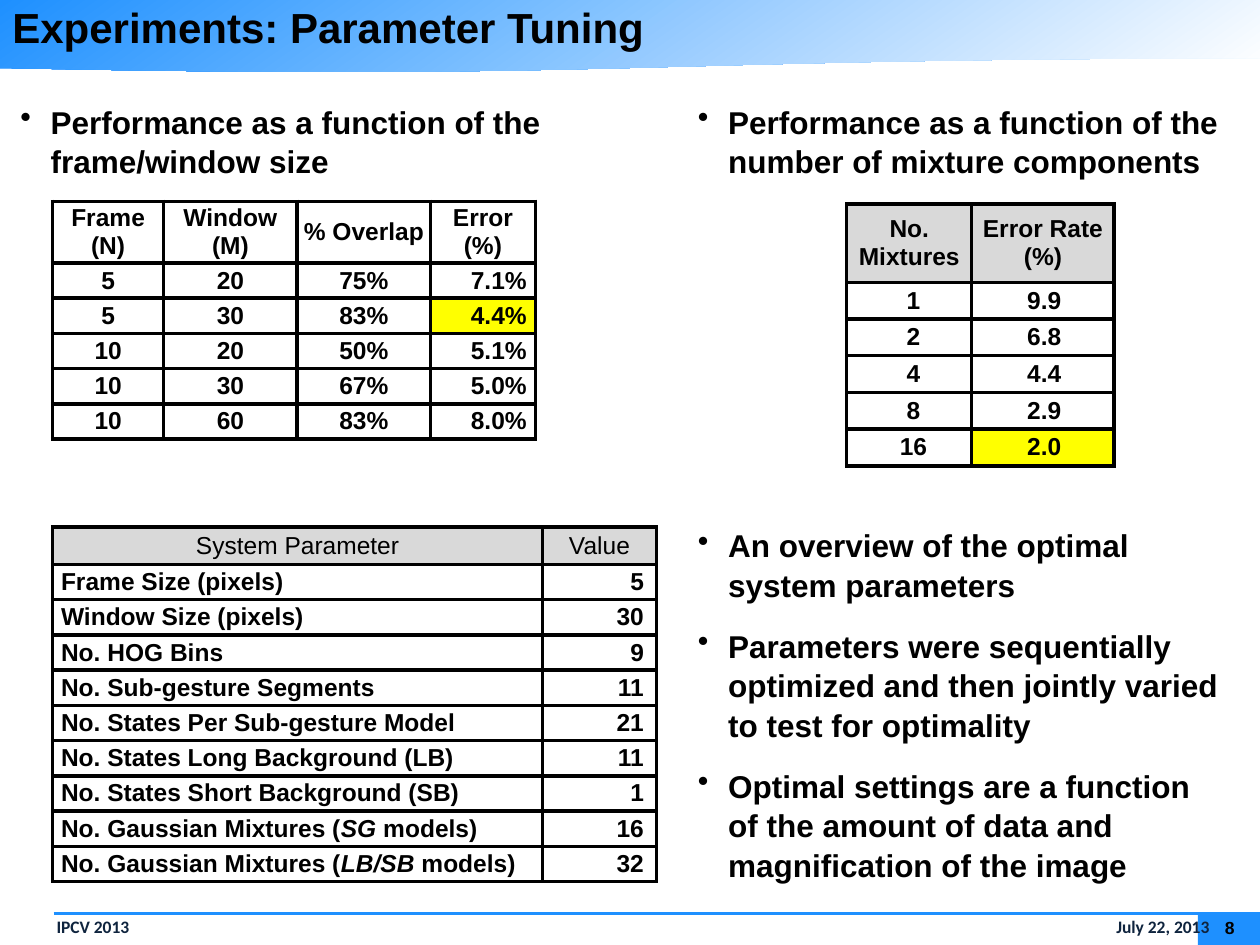
"""Build the slide on tuning the parameters of a gesture system."""
from dataclasses import dataclass

from lxml import etree
from pptx import Presentation
from pptx.dml.color import RGBColor
from pptx.enum.shapes import MSO_CONNECTOR, MSO_SHAPE
from pptx.enum.text import MSO_ANCHOR, PP_ALIGN
from pptx.oxml.ns import qn
from pptx.util import Cm, Pt

LEFT, MID, RIGHT, JUST = PP_ALIGN.LEFT, PP_ALIGN.CENTER, PP_ALIGN.RIGHT, PP_ALIGN.JUSTIFY
TOP, CENTER = MSO_ANCHOR.TOP, MSO_ANCHOR.MIDDLE
WAVE, RECT, LINE = MSO_SHAPE.FLOWCHART_DOCUMENT, MSO_SHAPE.RECTANGLE, MSO_CONNECTOR.STRAIGHT


@dataclass(frozen=True)
class Theme:
    """Colours, fonts and type sizes."""
    black: str = "000000"
    white: str = "FFFFFF"
    blue: str = "1E90FF"
    navy: str = "0F243E"
    grey: str = "D9D9D9"
    mark: str = "FFFF00"
    font: str = "Arial"
    foot: str = "Calibri"
    head: float = 24
    body: float = 18
    cell: float = 14
    small: float = 10
    rule: float = 1.5
    grid: float = 2.25


class Deck:
    """Hold the style and the current slide."""

    def __init__(self, theme):
        self.theme = theme
        self.file = Presentation()
        self.file.slide_width, self.file.slide_height = Cm(25.4), Cm(19.05)
        self.slide = self.file.slides.add_slide(self.file.slide_layouts[5])
        self.shapes = self.slide.shapes

    def run(self, par, text, size, color=None, font=None, bold=True, slant=False):
        run = par.add_run()
        run.text = text
        run.font.name, run.font.size = font or self.theme.font, Pt(size)
        run.font.bold, run.font.italic = bold, slant
        run.font.color.rgb = RGBColor.from_string(color or self.theme.black)

    def frame(self, box, pad=(0, 0, 0, 0), anchor=TOP):
        frame = box.text_frame
        frame.word_wrap, frame.vertical_anchor = True, anchor
        (frame.margin_left, frame.margin_top,
         frame.margin_right, frame.margin_bottom) = map(Cm, pad)
        return frame

    def box(self, at):
        return self.shapes.add_textbox(*map(Cm, at))

    def shape(self, kind, at, fade=False):
        shape = self.shapes.add_shape(kind, *map(Cm, at))
        shape.shadow.inherit = False
        shape.line.fill.background()
        blue = RGBColor.from_string(self.theme.blue)
        if fade:
            shape.fill.gradient()
            shape.fill.gradient_angle = 305
            start, end = shape.fill.gradient_stops
            start.color.rgb = blue
            end.color.rgb = RGBColor.from_string(self.theme.white)
        else:
            shape.fill.solid()
            shape.fill.fore_color.rgb = blue

    def line(self, *ends):
        line = self.shapes.add_connector(LINE, *map(Cm, ends))
        line.line.color.rgb = RGBColor.from_string(self.theme.blue)
        line.line.width = Pt(self.theme.rule)
        etree.SubElement(line.element.spPr, qn("a:effectLst"))

    def title(self, text, at):
        box = self.shapes.title
        box.left, box.top, box.width, box.height = map(Cm, at)
        box.element.getparent().append(box.element)
        par = self.frame(box, (0.25, 0.13, 0.25, 0.13), CENTER).paragraphs[0]
        par.alignment = LEFT
        self.run(par, text, self.theme.head)

    def footer(self, left, right, at, indent, stop):
        par = self.frame(self.box(at), (0.25, 0.13, 0.25, 0.13)).paragraphs[0]
        props = par._p.get_or_add_pPr()
        props.set("marL", str(Cm(indent)))
        tabs = etree.SubElement(props, qn("a:tabLst"))
        etree.SubElement(tabs, qn("a:tab"), pos=str(Cm(stop)), algn="r")
        par.line_spacing = 0.95
        self.run(par, f"{left}\t{right}", self.theme.small, self.theme.navy, self.theme.foot)

    def number(self, text, at):
        par = self.frame(self.box(at), anchor=CENTER).paragraphs[0]
        par.alignment = MID
        self.run(par, text, self.theme.small)

    def bullets(self, at, *lines):
        frame = self.frame(self.box(at))
        for i, text in enumerate(lines):
            par = frame.add_paragraph() if i else frame.paragraphs[0]
            props = par._p.get_or_add_pPr()
            props.set("marL", str(Cm(0.61)))
            props.set("indent", str(-Cm(0.61)))
            etree.SubElement(props, qn("a:buChar"), char="•")
            par.line_spacing, par.space_after = 1.05, Pt(12)
            self.run(par, text, self.theme.body)

    def cell(self, cell, text, fill, align, pad, bold=True):
        cell.fill.solid()
        cell.fill.fore_color.rgb = RGBColor.from_string(fill)
        cell.vertical_anchor = CENTER
        cell.margin_left, cell.margin_right = map(Cm, pad)
        cell.margin_top = cell.margin_bottom = 0
        par = cell.text_frame.paragraphs[0]
        par.alignment = align
        for i, part in enumerate(text.split("*")):
            self.run(par, part, self.theme.cell, bold=bold, slant=i % 2 == 1)
        props = cell._tc.get_or_add_tcPr()
        for i, side in enumerate(("a:lnL", "a:lnR", "a:lnT", "a:lnB")):
            edge = etree.Element(qn(side), w=str(Pt(self.theme.grid)))
            ink = etree.SubElement(edge, qn("a:solidFill"))
            etree.SubElement(ink, qn("a:srgbClr"), val=self.theme.black)
            props.insert(i, edge)

    def table(self, at, cols, tall, rows, aligns, pads, fill, inset=0.17, mark=None, bold=True):
        head, body = tall
        high = head + body * (len(rows) - 1)
        size = map(Cm, (*at, sum(cols), high))
        table = self.shapes.add_table(len(rows), len(cols), *size).table
        table.first_row = table.horz_banding = False
        for col, width in zip(table.columns, cols):
            col.width = Cm(width)
        for r, row in enumerate(rows):
            table.rows[r].height = Cm(body if r else head)
            for c, text in enumerate(row):
                cell = table.cell(r, c)
                if r == 0:
                    self.cell(cell, text, fill, MID, (inset, inset), bold)
                else:
                    tint = self.theme.mark if (r, c) == mark else self.theme.white
                    self.cell(cell, text, tint, aligns[c], pads[c])


def main():
    theme = Theme()
    deck = Deck(theme)
    deck.shape(WAVE, (0, 0, 25.43, 1.47), fade=True)
    deck.shape(RECT, (24.15, 18.39, 1.27, 0.66))
    deck.footer("IPCV 2013", "July 22, 2013", (0.1, 18.36, 25.32, 0.66), 0.79, 23.65)
    deck.line(1.08, 18.41, 25.4, 18.41)
    deck.number("8", (24.28, 18.49, 1.02, 0.43))
    deck.title("Experiments: Parameter Tuning", (0, 0, 25.4, 1.09))

    deck.bullets((0.41, 2.03, 10.67, 1.55),
                 "Performance as a function of the frame/window size")
    frames = [("Frame (N)", "Window (M)", "% Overlap", "Error (%)"),
              ("5", "20", "75%", "7.1%"), ("5", "30", "83%", "4.4%"),
              ("10", "20", "50%", "5.1%"), ("10", "30", "67%", "5.0%"),
              ("10", "60", "83%", "8.0%")]
    deck.table((1.06, 4.06), (2.24, 2.69, 2.69, 2.11), (1.24, 0.71), frames,
               (MID, MID, MID, RIGHT), [(0.17, 0.17)] * 4, theme.white, 0.05, (2, 3))

    system = [("System Parameter", "Value"),
              ("Frame Size (pixels)", "5"), ("Window Size (pixels)", "30"),
              ("No. HOG Bins", "9"), ("No. Sub-gesture Segments", "11"),
              ("No. States Per Sub-gesture Model", "21"),
              ("No. States Long Background (LB)", "11"),
              ("No. States Short Background (SB)", "1"),
              ("No. Gaussian Mixtures (*SG* models)", "16"),
              ("No. Gaussian Mixtures (*LB/SB* models)", "32")]
    deck.table((1.06, 10.62), (9.88, 2.29), (0.76, 0.71), system,
               (JUST, RIGHT), [(0.17, 0.17), (0.05, 0.25)], theme.grey, bold=False)

    mixes = [("No. Mixtures", "Error Rate (%)"), ("1", "9.9"), ("2", "6.8"),
             ("4", "4.4"), ("8", "2.9"), ("16", "2.0")]
    deck.table((17.07, 4.11), (2.52, 2.87), (1.58, 0.74), mixes,
               (MID, MID), [(0.17, 0), (0.05, 0)], theme.grey, mark=(5, 1))

    deck.bullets((14.07, 2.03, 10.67, 1.55),
                 "Performance as a function of the number of mixture components")
    deck.bullets((14.07, 10.57, 10.67, 7.01),
                 "An overview of the optimal system parameters",
                 "Parameters were sequentially optimized and then jointly varied "
                 "to test for optimality",
                 "Optimal settings are a function of the amount of data and "
                 "magnification of the image")
    deck.file.save("out.pptx")


if __name__ == "__main__":
    main()
